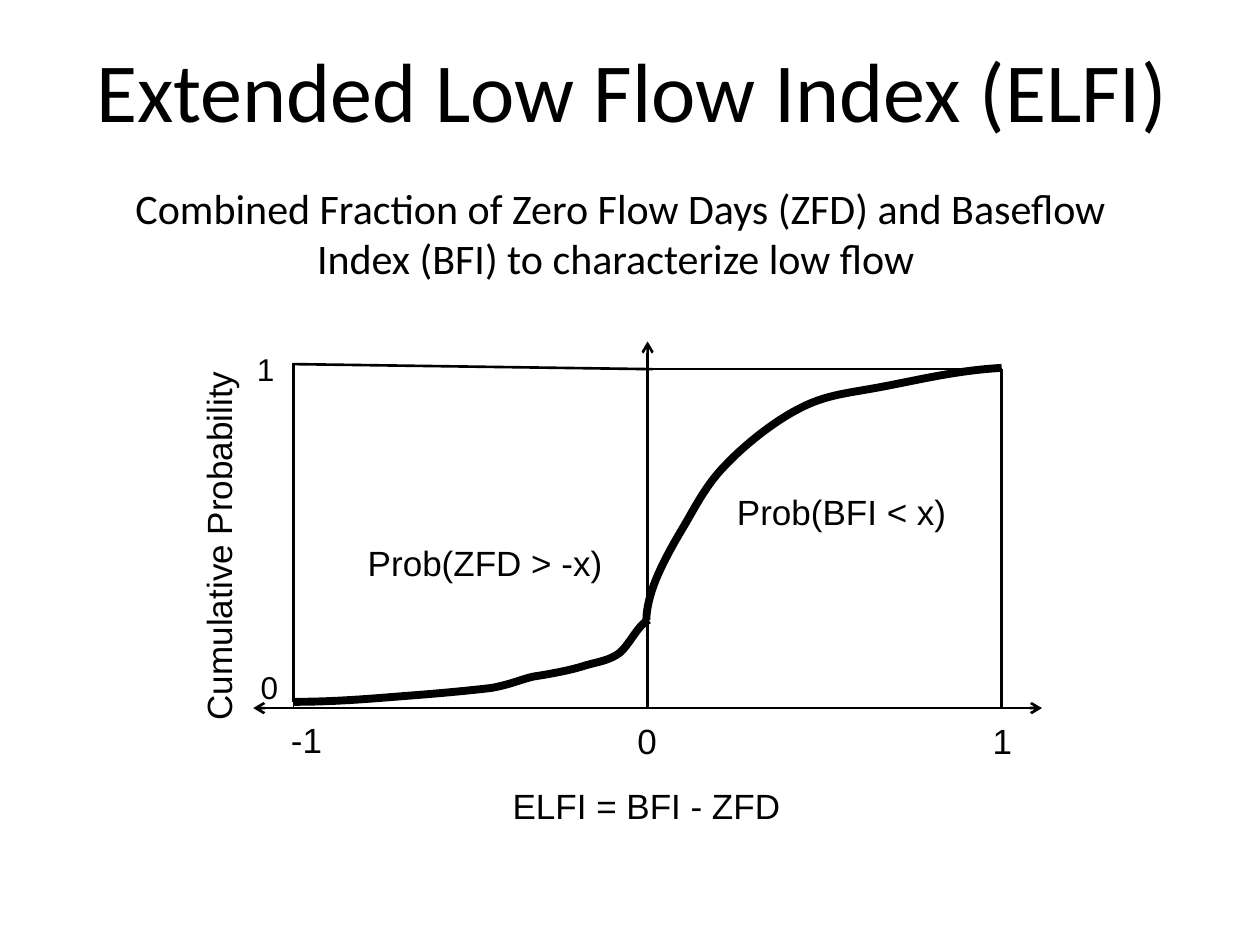
from lxml import etree
from pptx import Presentation
from pptx.dml.color import RGBColor
from pptx.enum.shapes import MSO_CONNECTOR
from pptx.enum.text import MSO_ANCHOR, MSO_AUTO_SIZE, PP_ALIGN
from pptx.oxml.ns import qn
from pptx.util import Inches, Pt

STRAIGHT = MSO_CONNECTOR.STRAIGHT
MIDDLE = MSO_ANCHOR.MIDDLE
CENTER, LEFT = PP_ALIGN.CENTER, PP_ALIGN.LEFT
FIT, FIXED = MSO_AUTO_SIZE.SHAPE_TO_FIT_TEXT, MSO_AUTO_SIZE.NONE

INK = "000000"
X0, XMID, X1 = 2.33, 5.14, 7.95
TOP, BASE = 2.93, 5.62

HEAD = "Extended Low Flow Index (ELFI)"
SUB = ("Combined Fraction of Zero Flow Days (ZFD) and Baseflow "
       "Index (BFI) to characterize low flow ")

LABELS = [
    ("Cumulative Probability", (0.24, 4.1, 2.99, 0.44), 20, 270),
    ("-1", (2.21, 5.65, 0.45, 0.44), 20, 0),
    ("0", (4.96, 5.66, 0.36, 0.44), 20, 0),
    ("1", (7.78, 5.66, 0.36, 0.44), 20, 0),
    ("0", (1.97, 5.25, 0.34, 0.4), 18, 0),
    ("1", (1.94, 2.73, 0.34, 0.4), 18, 0),
    ("Prob(BFI < x)", (5.75, 3.84, 1.88, 0.44), 20, 0),
    ("Prob(ZFD > -x)", (2.82, 4.25, 2.08, 0.44), 20, 0),
    ("ELFI = BFI - ZFD", (3.97, 6.18, 2.34, 0.44), 20, 0),
]

AXES = [
    (XMID, BASE, 8.27, BASE),
    (XMID, BASE, XMID, 2.71),
    (XMID, BASE, 2.01, BASE),
]
FRAME = [
    (X1, TOP, XMID, TOP, 1.5),
    (X1, TOP, X1, BASE, 1.5),
    (X0, 2.89, 5.18, TOP, 1.5),
    (X0, 2.88, X0, 5.57, 1.5),
    (X0, BASE, X0, 5.53, 0.75),
]

CURVES = [
    [(5.13, 4.92),
     (5.13, 4.83), (5.16, 4.71), (5.21, 4.59),
     (5.26, 4.47), (5.33, 4.34), (5.42, 4.19),
     (5.51, 4.04), (5.6, 3.85), (5.76, 3.69),
     (5.91, 3.53), (6.15, 3.34), (6.35, 3.24),
     (6.56, 3.13), (6.74, 3.12), (7, 3.07),
     (7.27, 3.02), (7.59, 2.94), (7.95, 2.92)],
    [(5.15, 4.92),
     (5.07, 4.95), (5, 5.11), (4.92, 5.18),
     (4.84, 5.24), (4.76, 5.25), (4.65, 5.28),
     (4.53, 5.32), (4.36, 5.35), (4.23, 5.37),
     (4.11, 5.4), (4.06, 5.43), (3.9, 5.46),
     (3.73, 5.48), (3.52, 5.5), (3.26, 5.52),
     (3, 5.54), (2.69, 5.57), (2.33, 5.57)],
]


def rgb(code):
    return RGBColor.from_string(code)


def place(shape, box):
    shape.left, shape.top, shape.width, shape.height = map(Inches, box)


def write(shape, text, size, font, align):
    frame = shape.text_frame
    frame.text = text
    para = frame.paragraphs[0]
    para.alignment = align
    face = para.runs[0].font
    face.size, face.name = Pt(size), font
    face.color.rgb = rgb(INK)
    return frame


def banner(shape, box, text, size):
    place(shape, box)
    frame = write(shape, text, size, "Calibri", CENTER)
    frame.word_wrap = True
    frame.auto_size = FIXED
    frame.vertical_anchor = MIDDLE


def label(shapes, text, box, size, turn):
    shape = shapes.add_textbox(*map(Inches, box))
    frame = write(shape, text, size, "Arial", LEFT)
    frame.word_wrap = False
    frame.auto_size = FIT
    shape.rotation = turn


def rule(shapes, ends, width, arrow=False):
    line = shapes.add_connector(STRAIGHT, *map(Inches, ends))
    line.line.color.rgb = rgb(INK)
    line.line.width = Pt(width)
    props = line._element.spPr
    if arrow:
        etree.SubElement(props.find(qn("a:ln")), qn("a:tailEnd"), type="arrow")
    etree.SubElement(props, qn("a:effectLst"))


def curve(shapes, points):
    start, *others = [(Inches(x), Inches(y)) for x, y in points]
    pen = shapes.build_freeform(*start)
    pen.add_line_segments(others, close=False)
    shape = pen.convert_to_shape()
    steps = list(shape._element.iter(qn("a:lnTo")))
    for i in range(0, len(steps), 3):
        trio = steps[i:i + 3]
        bend = etree.Element(qn("a:cubicBezTo"))
        trio[0].addprevious(bend)
        for step in trio:
            bend.append(step[0])
            step.getparent().remove(step)
    shape.fill.background()
    shape.line.color.rgb = rgb(INK)
    shape.line.width = Pt(4.5)
    shape.shadow.inherit = False


def main():
    deck = Presentation()
    deck.slide_width, deck.slide_height = Inches(10), Inches(7.5)
    shapes = deck.slides.add_slide(deck.slide_layouts[5]).shapes
    banner(shapes.title, (0.93, 1.5, 7.99, 0.69), SUB, 24)
    head = shapes.add_textbox(0, 0, 0, 0)
    banner(head, (0.12, 0.16, 9.79, 1.1), HEAD, 48)
    for ends in AXES:
        rule(shapes, ends, 1.5, arrow=True)
    for *ends, width in FRAME:
        rule(shapes, ends, width)
    for points in CURVES:
        curve(shapes, points)
    for item in LABELS:
        label(shapes, *item)
    deck.save("out.pptx")


if __name__ == "__main__":
    main()
